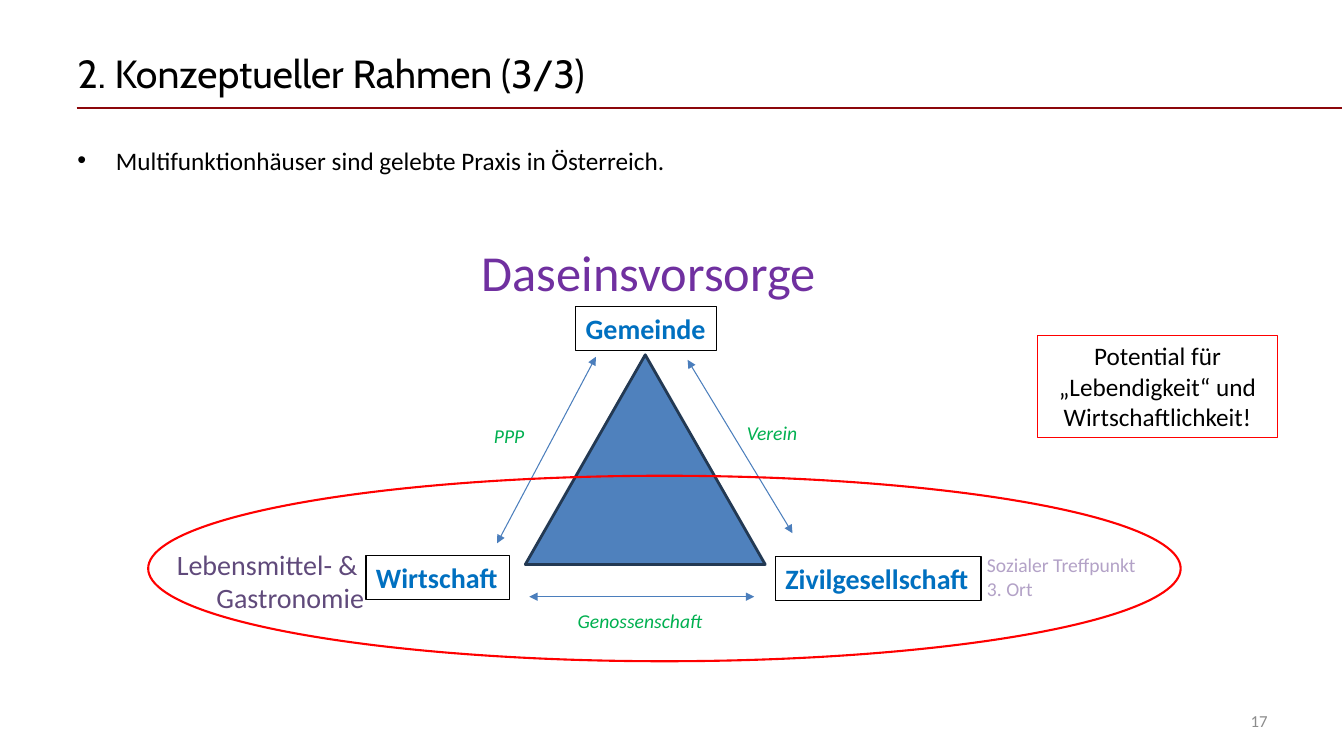
from lxml.etree import SubElement
from pptx import Presentation
from pptx.dml.color import RGBColor
from pptx.enum.shapes import MSO_CONNECTOR, MSO_SHAPE
from pptx.enum.text import MSO_ANCHOR, PP_ALIGN
from pptx.oxml.ns import qn
from pptx.util import Inches, Pt

HUES = {
    "black": "000000", "rule": "8C070A", "red": "FF0000", "green": "00B050",
    "violet": "7030A0", "plum": "604A7B", "lilac": "B3A2C7", "blue": "0070C0",
    "fill": "4F81BD", "edge": "233953", "arrow": "4B7EBC", "grey": "8C8C8C",
}


def tint(name):
    """Return the named colour."""
    return RGBColor.from_string(HUES[name])


def write(shape, text, size, hue, face="Calibri", bold=False, slant=False,
          align=PP_ALIGN.LEFT, anchor=MSO_ANCHOR.TOP, wrap=False):
    """Put styled text into a shape."""
    frame = shape.text_frame
    frame.text = text
    frame.word_wrap = wrap
    frame.vertical_anchor = anchor
    for para in frame.paragraphs:
        para.alignment = align
        for run in para.runs:
            font = run.font
            font.name, font.size = face, Pt(size)
            font.bold, font.italic = bold, slant
            font.color.rgb = tint(hue)


def add_text(slide, area, text, size, hue, **style):
    """Add a text box."""
    box = slide.shapes.add_textbox(*map(Inches, area))
    write(box, text, size, hue, **style)
    return box


def add_form(slide, kind, area, line, width, fill=None):
    """Add an outlined preset shape."""
    form = slide.shapes.add_shape(kind, *map(Inches, area))
    form.shadow.inherit = False
    if fill:
        form.fill.solid()
        form.fill.fore_color.rgb = tint(fill)
    else:
        form.fill.background()
    form.line.color.rgb = tint(line)
    form.line.width = Pt(width)
    return form


def add_line(slide, ends, hue, width, heads=False):
    """Add a line, with arrowheads at both ends if wanted."""
    line = slide.shapes.add_connector(MSO_CONNECTOR.STRAIGHT, *map(Inches, ends))
    line.line.color.rgb = tint(hue)
    line.line.width = Pt(width)
    if heads:
        stroke = line.line._get_or_add_ln()
        for end in ("a:headEnd", "a:tailEnd"):
            SubElement(stroke, qn(end), type="triangle")
    SubElement(line._element.spPr, qn("a:effectLst"))


def add_point(slide, area, text):
    """Add a bulleted statement."""
    box = add_text(slide, area, text, 18, "black", wrap=True)
    props = box.text_frame.paragraphs[0]._p.get_or_add_pPr()
    props.set("marL", str(Inches(0.38)))
    props.set("indent", str(-Inches(0.38)))
    SubElement(props, qn("a:buFont"), typeface="Arial")
    SubElement(props, qn("a:buChar"), char="•")


def add_model(slide):
    """Draw the triangle of actors with its labels and arrows."""
    for area, text in (
        ((7.31, 4.13, 0.7, 0.34), "Verein"),
        ((5.63, 5.99, 1.46, 0.34), "Genossenschaft"),
        ((4.8, 4.16, 0.51, 0.34), "PPP"),
    ):
        add_text(slide, area, text, 14, "green", slant=True)
    add_text(slide, (4.68, 2.34, 3.55, 0.71), "Daseinsvorsorge", 36, "violet")
    add_text(slide, (1.63, 5.38, 2.08, 0.77), "Lebensmittel- & \nGastronomie",
             20, "plum", align=PP_ALIGN.RIGHT)
    add_text(slide, (9.69, 5.44, 1.69, 0.57), "Sozialer Treffpunkt\n3. Ort",
             14, "lilac")
    add_form(slide, MSO_SHAPE.ISOSCELES_TRIANGLE, (5.21, 3.52, 2.38, 2.08),
             "edge", 2, "fill")
    for area, text in (
        ((3.63, 5.51, 1.42, 0.44), "Wirtschaft"),
        ((5.71, 3.04, 1.4, 0.44), "Gemeinde"),
        ((7.69, 5.52, 2.04, 0.44), "Zivilgesellschaft"),
    ):
        box = add_form(slide, MSO_SHAPE.RECTANGLE, area, "black", 0.75)
        write(box, text, 20, "blue", bold=True)
    for ends in ((5.91, 3.54, 4.93, 5.39), (6.82, 3.57, 7.86, 5.29),
                 (7.48, 5.92, 5.25, 5.92)):
        add_line(slide, ends, "arrow", 0.75, heads=True)


def main():
    """Build and save the slide."""
    deck = Presentation()
    deck.slide_width, deck.slide_height = Inches(13.33), Inches(7.5)
    slide = deck.slides.add_slide(deck.slide_layouts[6])
    add_line(slide, (0.76, 1.07, 13.31, 1.07), "rule", 1.25)
    add_point(slide, (0.67, 1.39, 12, 5.31),
              "Multifunktionhäuser sind gelebte Praxis in Österreich.")
    add_text(slide, (0.67, 0.3, 12, 0.85), "2. Konzeptueller Rahmen (3/3)", 28,
             "black", face="Cabin", anchor=MSO_ANCHOR.MIDDLE, wrap=True)
    add_model(slide)
    add_form(slide, MSO_SHAPE.OVAL, (1.47, 4.72, 10.24, 1.84), "red", 1.5)
    note = add_form(slide, MSO_SHAPE.RECTANGLE, (10.29, 3.33, 2.38, 1.01),
                    "red", 0.75)
    write(note, "Potential für „Lebendigkeit“ und Wirtschaftlichkeit!", 18,
          "black", align=PP_ALIGN.CENTER, wrap=True)
    add_text(slide, (9.56, 6.95, 3.11, 0.4), "17", 12, "grey",
             align=PP_ALIGN.RIGHT, anchor=MSO_ANCHOR.MIDDLE, wrap=True)
    deck.save("out.pptx")


if __name__ == "__main__":
    main()
